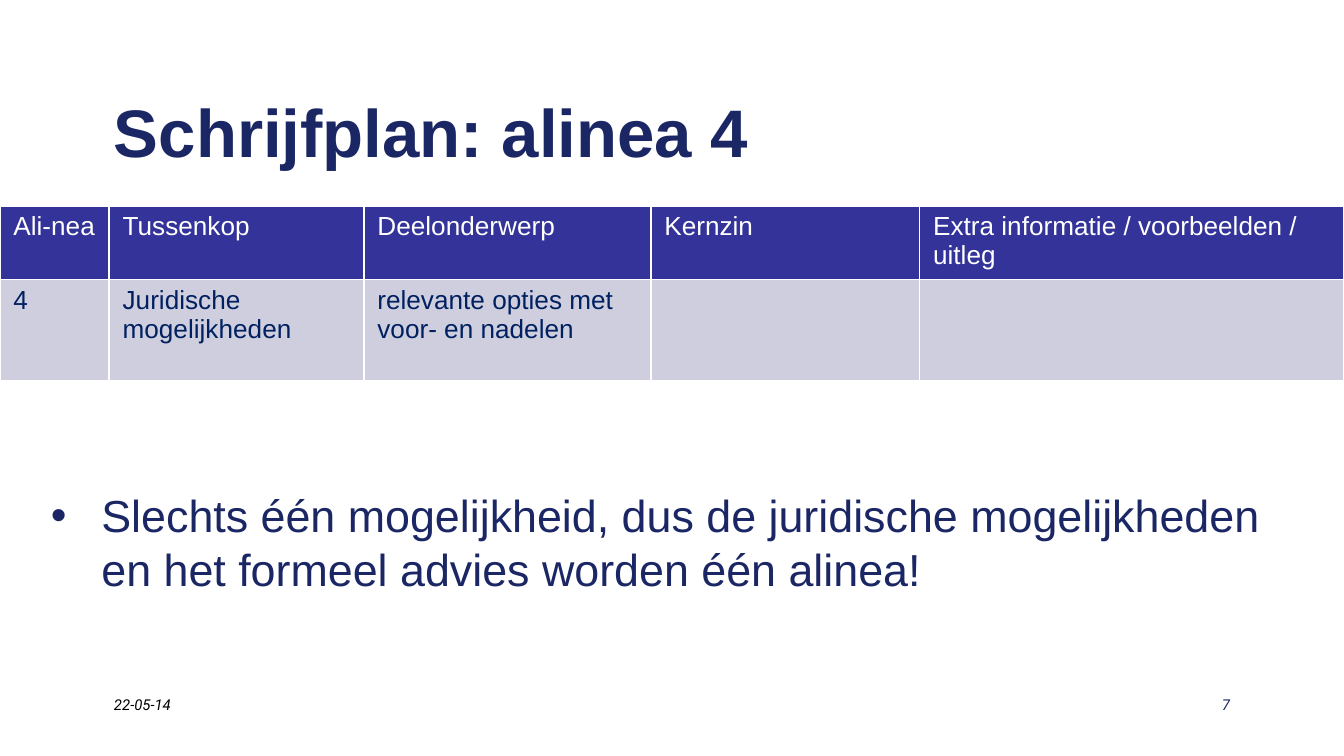
from lxml import etree
from pptx import Presentation
from pptx import util as u
from pptx.dml.color import RGBColor
from pptx.enum import text
from pptx.oxml.ns import qn

PX = 9525
NAVY, INK, WHITE = "1B2764", "002060", "FFFFFF"
HEAD, BODY = "333399", "CECEDE"
COLS = [78, 182, 205, 192, 303]
ROWS = [
    (50, HEAD, WHITE, ["Ali-nea", "Tussenkop", "Deelonderwerp", "Kernzin",
                       "Extra informatie / voorbeelden / uitleg"]),
    (72, BODY, INK, ["4", "Juridische mogelijkheden",
                     "relevante opties met voor- en nadelen", "", ""]),
]


def px(n):
    return u.Emu(n * PX)


def rgb(value):
    return RGBColor.from_string(value)


def set_font(font, color, **values):
    for name, value in values.items():
        setattr(font, name, value)
    font.color.rgb = rgb(color)


def add_text(s, box, content, color, size, name="Arial",
             anchor=text.MSO_ANCHOR.TOP, align=text.PP_ALIGN.LEFT, **style):
    tf = s.shapes.add_textbox(*map(px, box)).text_frame
    tf.word_wrap = True
    tf.vertical_anchor = anchor
    p = tf.paragraphs[0]
    p.alignment = align
    r = p.add_run()
    r.text = content
    set_font(r.font, color, name=name, size=u.Pt(size), **style)
    return p


def add_title(s, box):
    add_text(s, box, "Schrijfplan: alinea 4", NAVY, 36,
             anchor=text.MSO_ANCHOR.MIDDLE, bold=True)


def add_border(cell, color, width):
    tc_pr = cell._tc.get_or_add_tcPr()
    for i, side in enumerate(("lnL", "lnR", "lnT", "lnB")):
        ln = etree.Element(qn("a:" + side), w=str(u.Pt(width)))
        fill = etree.SubElement(ln, qn("a:solidFill"))
        etree.SubElement(fill, qn("a:srgbClr"), val=color)
        tc_pr.insert(i, ln)


def add_plan(s, box):
    table = s.shapes.add_table(len(ROWS), len(COLS), *map(px, box)).table
    for col, width in zip(table.columns, COLS):
        col.width = px(width)
    for row, (height, fill, color, labels) in zip(table.rows, ROWS):
        row.height = px(height)
        for cell, label in zip(row.cells, labels):
            cell.fill.solid()
            cell.fill.fore_color.rgb = rgb(fill)
            cell.margin_top = cell.margin_bottom = px(4)
            add_border(cell, WHITE, 1)
            p = cell.text_frame.paragraphs[0]
            p.text = label
            set_font(p.font, color, name="Arial", size=u.Pt(14), bold=False)
            for r in p.runs:
                set_font(r.font, color, name="Arial", size=u.Pt(14), bold=False)


def add_remark(s, box):
    p = add_text(s, box, "Slechts één mogelijkheid, dus de juridische mogelijkheden "
                 "en het formeel advies worden één alinea!", NAVY, 24)
    p_pr = p._p.get_or_add_pPr()
    p_pr.set("marL", str(px(36)))
    p_pr.set("indent", str(px(-36)))
    etree.SubElement(p_pr, qn("a:buFont"), typeface="Arial")
    etree.SubElement(p_pr, qn("a:buChar"), char="•")


def add_footer(s, box):
    left, top, width, height = box
    part = 200
    style = dict(size=8, name="Roboto", italic=True)
    add_text(s, (left, top, part, height), "22-05-14", "000000", **style)
    add_text(s, (left + width - part, top, part, height), "7", NAVY,
             align=text.PP_ALIGN.RIGHT, **style)


def main():
    prs = Presentation()
    prs.slide_width, prs.slide_height = px(960), px(540)
    s = prs.slides.add_slide(prs.slide_layouts[6])
    add_title(s, (72, 48, 816, 90))
    add_footer(s, (72, 492, 816, 36))
    add_plan(s, (0, 147, sum(COLS), sum(row[0] for row in ROWS)))
    add_remark(s, (27, 344, 907, 156))
    prs.save("out.pptx")


if __name__ == "__main__":
    main()
